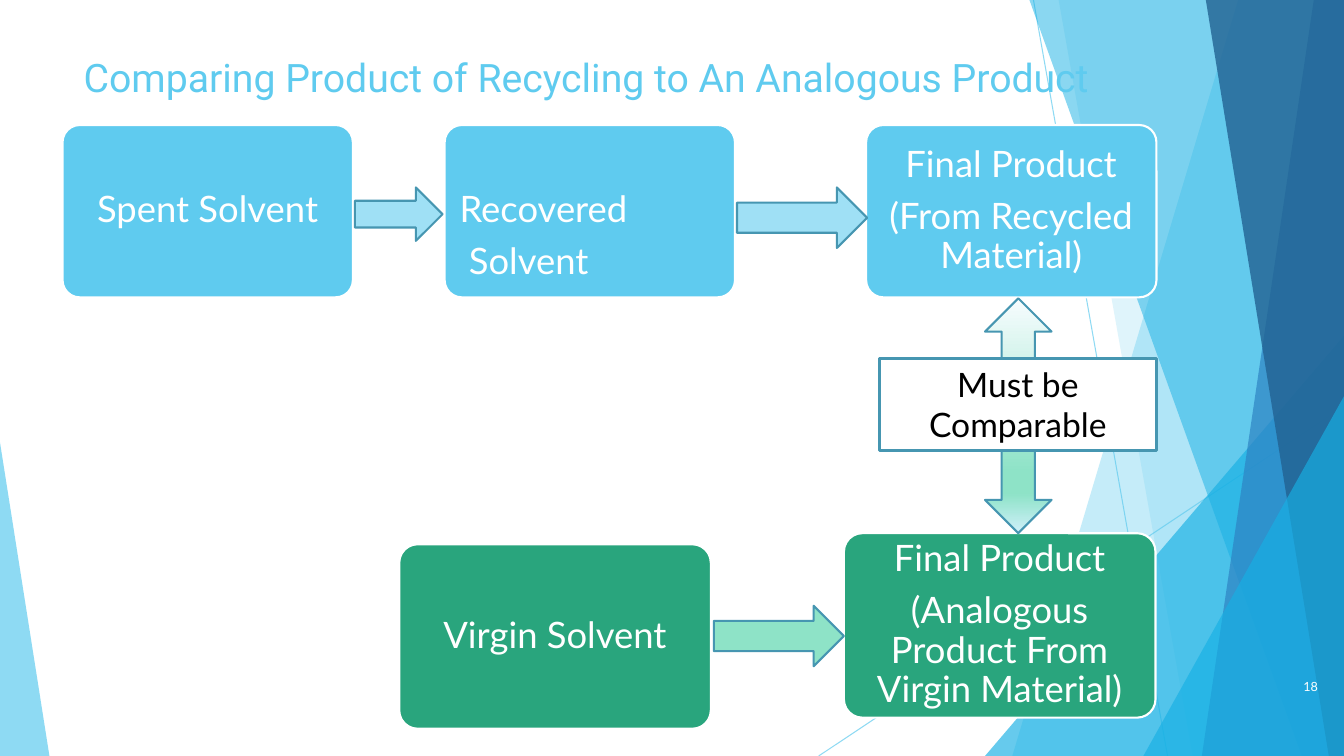
import pptx
import pptx.util
import pptx.dml.color
import pptx.enum.shapes
import pptx.enum.text
import pptx.oxml
import pptx.oxml.ns
from pptx.util import Inches

COLORS = {
    "white": "FFFFFF", "black": "000000", "sky": "5FCBEF", "cyan": "17B0E4",
    "blue": "2E83C3", "navy": "226292", "green": "29A57D",
    "pale_sky": "9FE0F5", "mint": "8EE3C7", "outline": "4696B1",
    "ice": "F7FCFE", "frost": "CFEFFA",
}
SHAPE = pptx.enum.shapes.MSO_SHAPE
ALIGN = pptx.enum.text.PP_ALIGN
ANCHOR = pptx.enum.text.MSO_ANCHOR
WIDTH, HEIGHT = 13.33, 7.5


def rgb(name):
    return pptx.dml.color.RGBColor.from_string(COLORS[name])


def xml(text):
    return pptx.oxml.parse_xml(text.replace(">", f" {pptx.oxml.ns.nsdecls('a')}>", 1))


def set_alpha(color_format_owner, percent):
    """Make a solid fill see-through."""
    color = color_format_owner.find(".//" + pptx.oxml.ns.qn("a:srgbClr"))
    color.append(xml(f'<a:alpha val="{percent * 1000}"></a:alpha>'))


def style(shape, fill, line=None, line_width=1.5, alpha=None):
    shape.shadow.inherit = False
    shape.fill.solid()
    shape.fill.fore_color.rgb = rgb(fill)
    if alpha:
        set_alpha(shape._element.spPr, alpha)
    if line:
        shape.line.color.rgb = rgb(line)
        shape.line.width = pptx.util.Pt(line_width)
    else:
        shape.line.fill.background()


def add_preset(slide, kind, box, fill, line=None, line_width=1.5, alpha=None):
    shape = slide.shapes.add_shape(kind, *map(Inches, box))
    style(shape, fill, line, line_width, alpha)
    return shape


def write(shape, lines, size, color, align, font="Lato", anchor=ANCHOR.TOP):
    frame = shape.text_frame
    frame.word_wrap = True
    frame.auto_size = pptx.enum.text.MSO_AUTO_SIZE.NONE
    frame.vertical_anchor = anchor
    frame.text = "\n".join(lines)
    for paragraph in frame.paragraphs:
        paragraph.alignment = align
        paragraph.font.size = pptx.util.Pt(size)
        paragraph.font.name = font
        paragraph.font.color.rgb = rgb(color)
    return frame


def add_ray(slide, start, end):
    ray = slide.shapes.add_connector(
        pptx.enum.shapes.MSO_CONNECTOR.STRAIGHT, *map(Inches, start + end))
    ray.line.color.rgb = rgb("sky")
    ray.line.width = pptx.util.Pt(0.75)
    set_alpha(ray._element.spPr, 70)
    ray._element.spPr.append(xml("<a:effectLst></a:effectLst>"))


def add_band(slide, top_left, bottom_left, fill, alpha):
    """Fill from a slanted left edge to the right side of the slide."""
    builder = slide.shapes.build_freeform(Inches(top_left), 0)
    corners = [(WIDTH, 0), (WIDTH, HEIGHT), (bottom_left, HEIGHT)]
    builder.add_line_segments([(Inches(x), Inches(y)) for x, y in corners])
    style(builder.convert_to_shape(), fill, alpha=alpha)


def add_wedge(slide, box, apex, fill, alpha):
    wedge = add_preset(slide, SHAPE.ISOSCELES_TRIANGLE, box, fill, alpha=alpha)
    wedge.adjustments[0] = apex


def add_step(slide, box, fill, lines, align=ALIGN.CENTER, anchor=ANCHOR.MIDDLE):
    step = add_preset(slide, SHAPE.ROUNDED_RECTANGLE, box, fill, "white")
    step.adjustments[0] = 0.1
    frame = write(step, lines, 26, "white", align, anchor=anchor)
    frame.margin_left = frame.margin_right = Inches(0.1)
    frame.margin_top = frame.margin_bottom = Inches(0.1)
    for paragraph in frame.paragraphs:
        paragraph.line_spacing = 0.9
        paragraph.space_after = pptx.util.Pt(9)


def add_comparison_arrow(slide, box):
    arrow = add_preset(slide, SHAPE.UP_DOWN_ARROW, box, "mint", "outline")
    stops = [(0, "ice"), (74, "mint"), (83, "mint"), (100, "frost")]
    stop_xml = "".join(
        f'<a:gs pos="{position * 1000}"><a:srgbClr val="{COLORS[name]}"/></a:gs>'
        for position, name in stops)
    gradient = xml(f'<a:gradFill rotWithShape="1"><a:gsLst>{stop_xml}</a:gsLst>'
                   '<a:lin ang="5400000" scaled="0"/></a:gradFill>')
    properties = arrow._element.spPr
    properties.replace(properties.find(pptx.oxml.ns.qn("a:solidFill")), gradient)


def add_backdrop(slide):
    add_ray(slide, (10.25, 0), (11.58, HEIGHT))
    add_ray(slide, (WIDTH, 4.03), (8.12, HEIGHT))
    add_band(slide, 12.28, 10.04, "sky", 36)
    add_band(slide, 10.5, 11.83, "sky", 20)
    add_wedge(slide, (9.77, 3.33, 3.56, 4.17), 1, "cyan", 66)
    add_band(slide, 10.21, 12.91, "cyan", 50)
    add_band(slide, 13.03, 11.92, "blue", 70)
    add_band(slide, 11.96, 13.18, "navy", 80)
    add_wedge(slide, (11.34, 3.93, 1.99, 3.57), 1, "cyan", 66)
    add_wedge(slide, (0, 4.39, 0.49, 3.11), 0, "sky", 70)


def add_title(slide, text):
    title = slide.shapes.title
    title.left, title.top = Inches(0.73), Inches(0.48)
    title.width, title.height = Inches(10.25), Inches(0.57)
    write(title, [text], 28, "sky", ALIGN.LEFT, "Roboto")
    # Bring the title in front of the backdrop
    title._element.getparent().append(title._element)


def main():
    presentation = pptx.Presentation()
    presentation.slide_width = Inches(WIDTH)
    presentation.slide_height = Inches(HEIGHT)
    slide = presentation.slides.add_slide(presentation.slide_layouts[5])
    add_backdrop(slide)

    # Virgin solvent row
    add_step(slide, (3.96, 5.4, 3.09, 1.83), "green", ["Virgin Solvent"])
    add_step(slide, (8.37, 5.29, 3.09, 1.83), "green",
             ["Final Product", "(Analogous Product From Virgin Material)"])

    # Recycled solvent row
    add_step(slide, (0.62, 1.24, 2.88, 1.71), "sky", ["Spent Solvent"])
    add_step(slide, (4.41, 1.24, 2.88, 1.71), "sky", ["Recovered", " Solvent"],
             ALIGN.LEFT, ANCHOR.BOTTOM)
    add_step(slide, (8.59, 1.24, 2.88, 1.71), "sky",
             ["Final Product", "(From Recycled Material)"])

    # Arrows between steps
    for box, fill in [((3.52, 1.86, 0.87, 0.53), "pale_sky"),
                      ((7.31, 1.86, 1.29, 0.6), "pale_sky"),
                      ((7.08, 6.01, 1.29, 0.6), "mint")]:
        add_preset(slide, SHAPE.RIGHT_ARROW, box, fill, "outline")

    # Comparison of the two final products
    add_comparison_arrow(slide, (9.77, 2.96, 0.66, 2.33))
    label = add_preset(slide, SHAPE.RECTANGLE, (8.72, 3.56, 2.75, 0.91),
                       "white", "outline", 2)
    write(label, ["Must be Comparable"], 24, "black", ALIGN.CENTER)

    # Title and slide number
    add_title(slide, "Comparing Product of Recycling to An Analogous Product")
    number = slide.shapes.add_textbox(*map(Inches, (12.42, 6.61, 0.75, 0.4)))
    write(number, ["18"], 9, "white", ALIGN.RIGHT, anchor=ANCHOR.MIDDLE)

    presentation.save("out.pptx")


if __name__ == "__main__":
    main()
